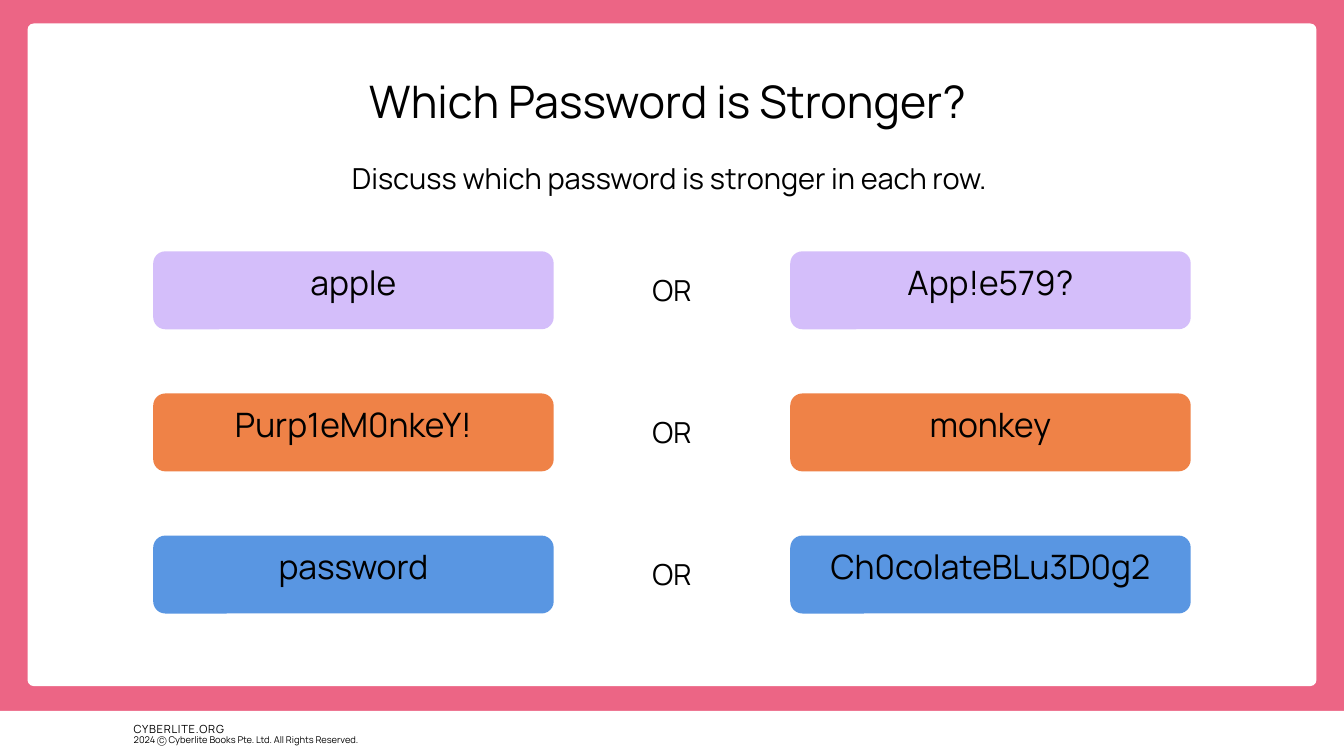
from pptx import Presentation
from pptx.dml.color import RGBColor
from pptx.enum.shapes import MSO_SHAPE
from pptx.enum.text import MSO_ANCHOR, PP_ALIGN
from pptx.util import Inches, Pt

W, H = 20, 11.25
FONT = "Manrope"
BLACK, WHITE, PINK = "000000", "FFFFFF", "EC6585"
MARGIN, CARD_W, CARD_H = 2.28, 5.96, 1.16
COLUMNS = (MARGIN, W - MARGIN - CARD_W)
FIRST_ROW, ROW_STEP = 3.74, 2.115
OR_W, OR_H, OR_DROP = 1.25, 0.61, 0.23
TEXT_W = 15.92
TEXT_X = (W - TEXT_W) / 2
FOOTER_X, FOOTER_H = 1.99, 0.67

ROWS = [
    ("apple", "App!e579?", "D4BEFA"),
    ("Purp1eM0nkeY!", "monkey", "EF8247"),
    ("password", "Ch0colateBLu3D0g2", "5996E2"),
]


def paint(fill, color):
    fill.solid()
    fill.fore_color.rgb = RGBColor.from_string(color)


def write(tf, text, size, align=PP_ALIGN.CENTER, spacing=0):
    tf.word_wrap = True
    tf.vertical_anchor = MSO_ANCHOR.TOP
    tf.margin_left = tf.margin_right = tf.margin_top = tf.margin_bottom = 0
    p = tf.paragraphs[0]
    p.alignment = align
    p.line_spacing = Pt(size * 1.4)
    r = p.add_run()
    r.text = text
    r.font.name = FONT
    r.font.size = Pt(size)
    paint(r.font.fill, BLACK)
    if spacing:
        r._r.get_or_add_rPr().set("spc", str(int(spacing * 100)))


def add_text(s, x, y, w, h, text, size, **style):
    box = s.shapes.add_textbox(Inches(x), Inches(y), Inches(w), Inches(h))
    write(box.text_frame, text, size, **style)


def add_block(s, x, y, w, h, color, radius=0):
    kind = MSO_SHAPE.ROUNDED_RECTANGLE if radius else MSO_SHAPE.RECTANGLE
    sp = s.shapes.add_shape(kind, Inches(x), Inches(y), Inches(w), Inches(h))
    if radius:
        sp.adjustments[0] = radius / min(w, h)
    sp.shadow.inherit = False
    paint(sp.fill, color)
    sp.line.fill.background()
    return sp


def add_card(s, x, y, text, color):
    sp = add_block(s, x, y, CARD_W, CARD_H, color, radius=0.18)
    write(sp.text_frame, text, 36)


def add_footer(s):
    add_block(s, 0, H - FOOTER_H, W, FOOTER_H, WHITE)
    add_text(s, FOOTER_X, 10.72, 1.85, 0.23, "CYBERLITE.ORG", 12,
             align=PP_ALIGN.LEFT, spacing=0.8)
    add_text(s, FOOTER_X, 10.9, 4.63, 0.19,
             "2024 Ⓒ Cyberlite Books Pte. Ltd. All Rights Reserved.", 10,
             align=PP_ALIGN.LEFT)


def add_row(s, index, left, right, color):
    y = FIRST_ROW + index * ROW_STEP
    for x, password in zip(COLUMNS, (left, right)):
        add_card(s, x, y, password, color)
    add_text(s, (W - OR_W) / 2, y + OR_DROP, OR_W, OR_H, "OR", 31)


def main():
    prs = Presentation()
    prs.slide_width, prs.slide_height = Inches(W), Inches(H)
    s = prs.slides.add_slide(prs.slide_layouts[6])
    paint(s.background.fill, PINK)
    add_footer(s)
    add_block(s, 0.41, 0.35, W - 2 * 0.41, 9.86, WHITE, radius=0.09)
    add_text(s, TEXT_X, 0.97, TEXT_W, 0.95, "Which Password is Stronger? ", 48)
    add_text(s, TEXT_X, 2.31, TEXT_W, 0.61,
             "Discuss which password is stronger in each row. ", 31)
    for index, row in enumerate(ROWS):
        add_row(s, index, *row)
    prs.save("out.pptx")


if __name__ == "__main__":
    main()
